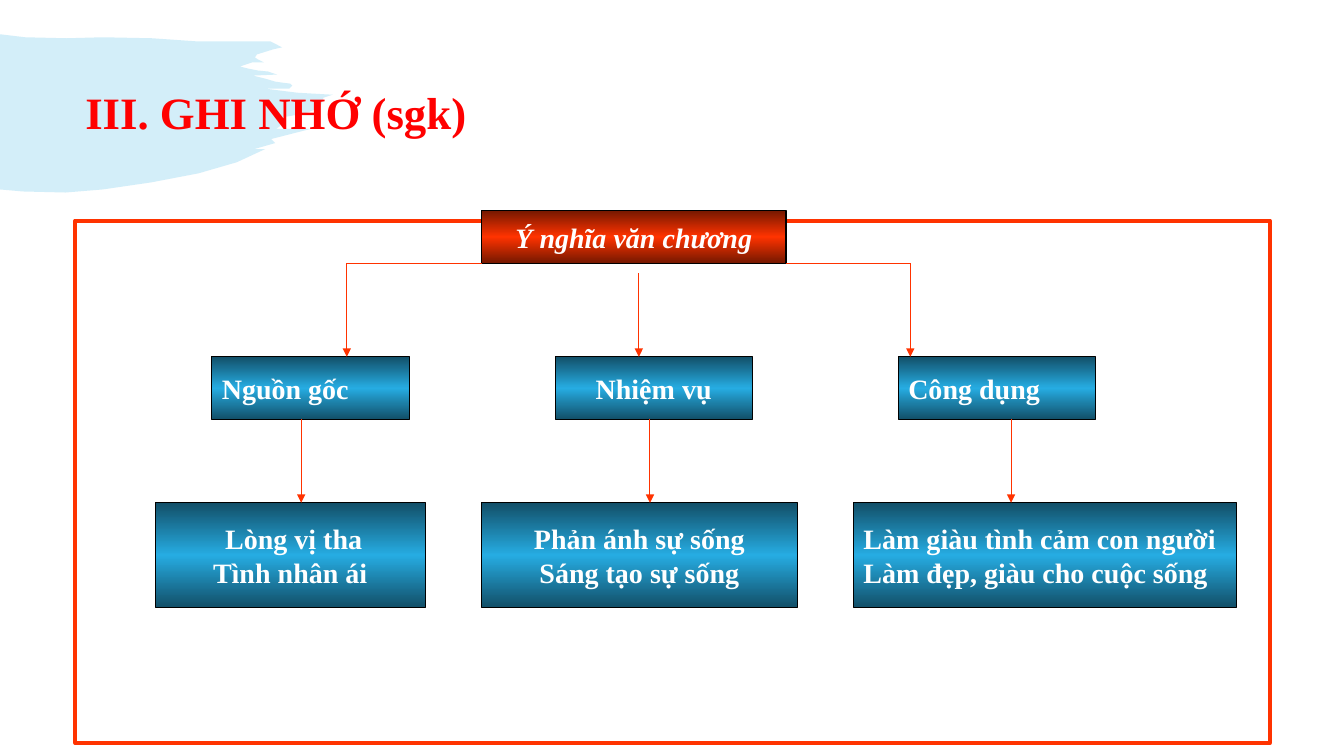
"""Build the summary slide on the meaning of literature."""
from copy import deepcopy

from lxml.etree import SubElement
from pptx import Presentation
from pptx.dml.color import RGBColor
from pptx.enum.shapes import MSO_CONNECTOR, MSO_SHAPE
from pptx.enum.text import MSO_ANCHOR, PP_ALIGN
from pptx.oxml.ns import qn
from pptx.util import Cm, Pt

COLORS = {
    "brush": "26ACE2",
    "title": "FF0000",
    "red": "FF3300",
    "dark_red": "761800",
    "blue": "26ACE2",
    "dark_blue": "124F68",
    "white": "FFFFFF",
    "black": "000000",
}
FONT = "Times New Roman"
RGB = {name: RGBColor.from_string(value) for name, value in COLORS.items()}

deck = Presentation()
deck.slide_width, deck.slide_height = Cm(33.87), Cm(19.05)
page = deck.slides.add_slide(deck.slide_layouts[6])


def add_box(left, top, width, height, lines, align, hue="blue", italic=False):
    """Add a gradient box with centred or left-aligned lines, in centimetres."""
    box = page.shapes.add_shape(
        MSO_SHAPE.RECTANGLE, Cm(left), Cm(top), Cm(width), Cm(height))
    box.shadow.inherit = False
    box.line.color.rgb = RGB["black"]
    box.line.width = Pt(0.75)
    box.fill.gradient()
    box.fill.gradient_angle = 90
    edge, core = box.fill.gradient_stops
    edge.color.rgb = RGB["dark_" + hue]
    edge.position = 0
    core.color.rgb = RGB[hue]
    core.position = 0.5
    stops = box._element.spPr.find(qn("a:gradFill")).find(qn("a:gsLst"))
    last_stop = deepcopy(stops[0])
    last_stop.set("pos", "100000")
    stops.append(last_stop)
    frame = box.text_frame
    frame.word_wrap = True
    frame.vertical_anchor = MSO_ANCHOR.MIDDLE
    frame.text = "\n".join(lines)
    for para in frame.paragraphs:
        para.alignment = align
        para.font.name = FONT
        para.font.size = Pt(20)
        para.font.bold = True
        para.font.italic = italic
        para.font.color.rgb = RGB["white"]


def add_line(x1, y1, x2, y2, arrow=True):
    """Add a thin red line in centimetres, with an arrowhead at its end if wanted."""
    line = page.shapes.add_connector(
        MSO_CONNECTOR.STRAIGHT, Cm(x1), Cm(y1), Cm(x2), Cm(y2))
    line.line.color.rgb = RGB["red"]
    line.line.width = Pt(0.75)
    if arrow:
        SubElement(line.line._get_or_add_ln(), qn("a:tailEnd"), type="triangle")
    SubElement(line._element.spPr, qn("a:effectLst"))


brush_points = [
    (0, 34), (25, 37), (66, 38), (102, 37), (151, 38), (194, 41), (248, 41),
    (268, 41), (280, 47), (271, 49), (255, 54), (253, 57), (256, 59), (262, 62),
    (250, 62), (238, 66), (246, 68), (256, 70), (266, 71), (275, 74), (251, 75),
    (263, 78), (273, 81), (280, 82), (288, 83), (290, 85), (287, 88), (284, 88),
    (263, 88), (295, 92), (330, 94), (321, 97), (318, 106), (307, 111), (300, 113),
    (283, 116), (280, 120), (278, 125), (274, 128), (308, 128), (269, 138),
    (273, 142), (252, 148), (263, 148), (235, 161), (197, 172), (150, 181),
    (102, 188), (65, 191), (23, 190), (0, 188),
]
outline = page.shapes.build_freeform(*brush_points[0], scale=Cm(0.0254))
outline.add_line_segments(brush_points[1:], close=True)
brush = outline.convert_to_shape()
brush.shadow.inherit = False
brush.line.fill.background()
brush.fill.solid()
brush.fill.fore_color.rgb = RGB["brush"]
brush_color = brush._element.spPr.find(qn("a:solidFill"))[0]
SubElement(brush_color, qn("a:alpha"), val="20000")

title = page.shapes.add_textbox(Cm(1.9), Cm(1.8), Cm(10.2), Cm(1.7))
title.text_frame.word_wrap = False
para = title.text_frame.paragraphs[0]
para.text = "III. GHI NHỚ (sgk)"
para.alignment = PP_ALIGN.JUSTIFY
para.line_spacing = 1.15
para.font.name = FONT
para.font.size = Pt(32)
para.font.bold = True
para.font.color.rgb = RGB["title"]

border = page.shapes.add_shape(
    MSO_SHAPE.RECTANGLE, Cm(1.9), Cm(5.56), Cm(30.1), Cm(13.16))
border.shadow.inherit = False
border.fill.solid()
border.fill.fore_color.rgb = RGB["white"]
border.line.color.rgb = RGB["red"]
border.line.width = Pt(3)

ROOT_LEFT, ROOT_TOP, ROOT_WIDTH, ROOT_HEIGHT = 12.14, 5.31, 7.67, 1.32
ROOT_RIGHT, ROOT_BOTTOM = ROOT_LEFT + ROOT_WIDTH, ROOT_TOP + ROOT_HEIGHT
HEAD_LEFT, HEAD_STEP, HEAD_TOP, HEAD_WIDTH, HEAD_HEIGHT = 5.34, 8.65, 8.99, 4.97, 1.58
DETAIL_TOP, DETAIL_HEIGHT = 12.67, 2.64

add_box(ROOT_LEFT, ROOT_TOP, ROOT_WIDTH, ROOT_HEIGHT, ["Ý nghĩa văn chương"],
        PP_ALIGN.CENTER, hue="red", italic=True)

branches = [
    ("Nguồn gốc", PP_ALIGN.LEFT, 8.74, ROOT_BOTTOM, 7.59, 3.91, 6.81,
     [" Lòng vị tha", "Tình nhân ái"], PP_ALIGN.CENTER),
    ("Nhiệm vụ", PP_ALIGN.CENTER, 16.1, 6.88, 16.38, 12.14, 7.95,
     ["Phản ánh sự sống", "Sáng tạo sự sống"], PP_ALIGN.CENTER),
    ("Công dụng", PP_ALIGN.LEFT, 22.94, ROOT_BOTTOM, 25.48, 21.51, 9.65,
     ["Làm giàu tình cảm con người", "Làm đẹp, giàu cho cuộc sống"], PP_ALIGN.LEFT),
]
for index, (head, head_align, upper_x, upper_top, lower_x,
            left, width, details, detail_align) in enumerate(branches):
    add_box(HEAD_LEFT + index * HEAD_STEP, HEAD_TOP, HEAD_WIDTH, HEAD_HEIGHT,
            [head], head_align)
    add_box(left, DETAIL_TOP, width, DETAIL_HEIGHT, details, detail_align)
    add_line(upper_x, upper_top, upper_x, HEAD_TOP)
    add_line(lower_x, HEAD_TOP + HEAD_HEIGHT, lower_x, DETAIL_TOP)

add_line(8.74, ROOT_BOTTOM, ROOT_LEFT, ROOT_BOTTOM, arrow=False)
add_line(ROOT_RIGHT, ROOT_BOTTOM, 22.94, ROOT_BOTTOM, arrow=False)

deck.save("out.pptx")
